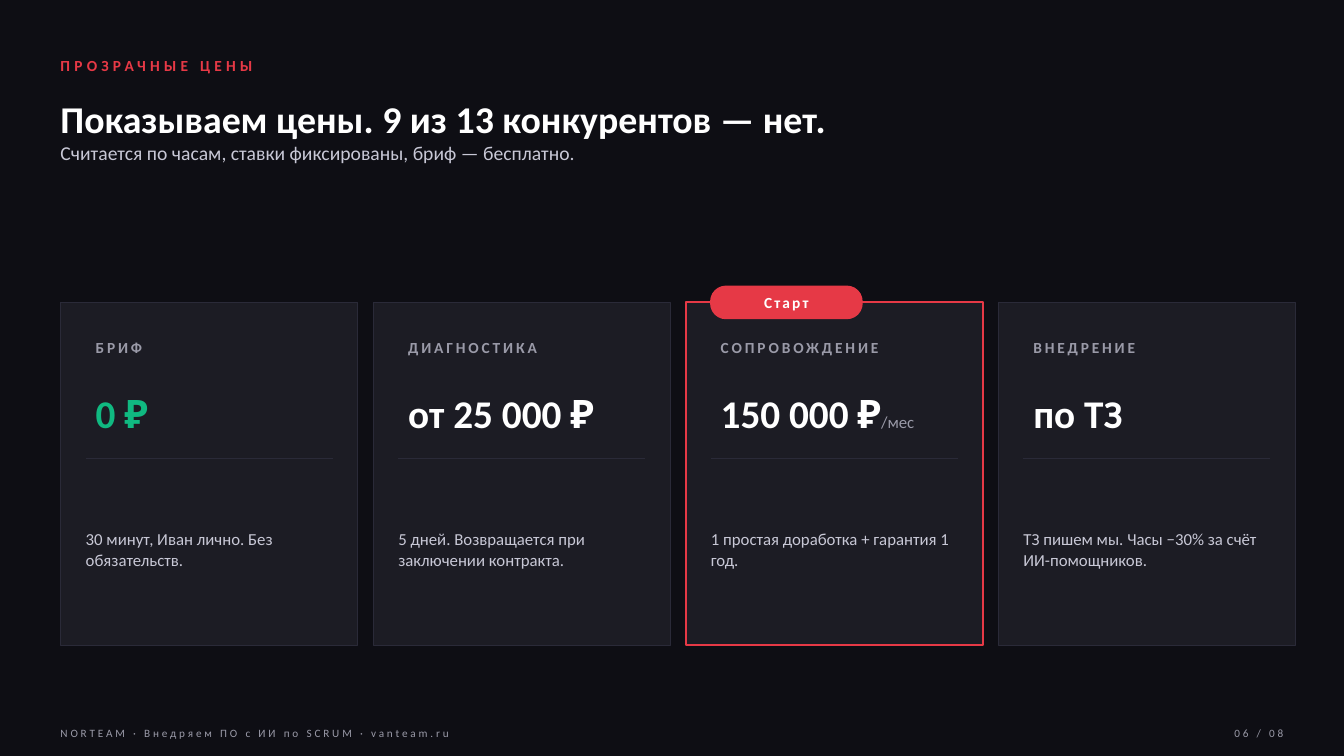
from lxml.etree import SubElement
from pptx import Presentation
from pptx.dml.color import RGBColor
from pptx.enum.shapes import MSO_CONNECTOR, MSO_SHAPE
from pptx.enum.text import MSO_ANCHOR, PP_ALIGN
from pptx.oxml.ns import qn
from pptx.util import Pt

RED, WHITE, GREEN = "E63946", "FFFFFF", "10B981"
GREY, PALE, EDGE, PANEL, NIGHT = "9A9AA8", "C8C8D6", "2A2A38", "1C1C24", "0E0E14"
LEFT, TOP, STEP, PAD = 60, 300, 310, 25
WIDE, HIGH = 295, 340
INNER = WIDE - 2 * PAD

CARDS = [
    ("БРИФ", [("0 ₽", 28, GREEN, True)],
     "30 минут, Иван лично. Без обязательств.", None),
    ("ДИАГНОСТИКА", [("от 25 000 ₽", 28, WHITE, True)],
     "5 дней. Возвращается при заключении контракта.", None),
    ("СОПРОВОЖДЕНИЕ", [("150 000 ₽", 28, WHITE, True), ("/мес", 12, GREY, False)],
     "1 простая доработка + гарантия 1 год.", "Старт"),
    ("ВНЕДРЕНИЕ", [("по ТЗ", 28, WHITE, True)],
     "ТЗ пишем мы. Часы −30% за счёт ИИ-помощников.", None),
]


def px(num):
    """Turn whole px, 100 to the inch, into EMU."""
    return num * 9144


def color(code):
    """Turn a hex string into a colour."""
    return RGBColor.from_string(code)


class Painter:
    """Draws styled elements on the current slide."""

    def __init__(self, slide, font="Calibri"):
        """Keep the slide and font, and paint the background."""
        self.slide, self.font = slide, font
        fill = slide.background.fill
        fill.solid()
        fill.fore_color.rgb = color(NIGHT)

    def text(self, box, parts, gap=0, align=PP_ALIGN.LEFT,
             anchor=MSO_ANCHOR.MIDDLE, inset=False, after=None):
        """Add one paragraph of (words, size, colour, bold) parts."""
        frame = self.slide.shapes.add_textbox(*map(px, box)).text_frame
        frame.word_wrap = True
        frame.vertical_anchor = anchor
        if not inset:
            frame.margin_left = frame.margin_right = 0
            frame.margin_top = frame.margin_bottom = 0
        para = frame.paragraphs[0]
        para.alignment = align
        if after:
            para.space_after = Pt(after)
        for words, size, tint, bold in parts:
            if words.startswith("\n"):
                para.add_line_break()
            run = para.add_run()
            run.text = words.lstrip("\n")
            font = run.font
            font.name, font.size, font.bold = self.font, Pt(size), bold
            font.color.rgb = color(tint)
            if gap:
                run._r.get_or_add_rPr().set("spc", str(int(gap * 100)))

    def shape(self, kind, box, fill, line, width):
        """Add a filled and outlined preset shape."""
        item = self.slide.shapes.add_shape(kind, *map(px, box))
        item.shadow.inherit = False
        item.fill.solid()
        item.fill.fore_color.rgb = color(fill)
        item.line.color.rgb = color(line)
        item.line.width = Pt(width)
        return item

    def rule(self, left, top, width):
        """Add a thin level line."""
        item = self.slide.shapes.add_connector(
            MSO_CONNECTOR.STRAIGHT, px(left), px(top), px(left + width), px(top))
        item.line.color.rgb = color(EDGE)
        item.line.width = Pt(0.75)
        SubElement(item._element.spPr, qn("a:effectLst"))

    def badge(self, left, label):
        """Add a pill that sits on the top edge of a card."""
        box = (left, TOP - 16, 150, 32)
        pill = self.shape(MSO_SHAPE.ROUNDED_RECTANGLE, box, RED, RED, 1)
        pill.adjustments[0] = 0.47
        self.text(box, [(label, 11, WHITE, True)], gap=1.5, align=PP_ALIGN.CENTER)

    def card(self, left, name, price, note, label):
        """Add one price card, marked in red if it has a label."""
        line, width = (RED, 1.5) if label else (EDGE, 0.75)
        self.shape(MSO_SHAPE.RECTANGLE, (left, TOP, WIDE, HIGH), PANEL, line, width)
        inner = left + PAD
        if label:
            self.badge(inner, label)
        self.text((inner, TOP + 30, INNER, 30), [(name, 11, GREY, True)],
                  gap=2, inset=True)
        self.text((inner, TOP + 75, INNER, 70), price, inset=True)
        self.rule(inner, TOP + 155, INNER)
        self.text((inner, TOP + 170, INNER, 150), [(note, 12, PALE, False)])


def main():
    """Build the price slide."""
    deck = Presentation()
    deck.slide_width, deck.slide_height = px(1333), px(750)
    pen = Painter(deck.slides.add_slide(deck.slide_layouts[6]))
    pen.text((LEFT, 50, 1200, 30), [("ПРОЗРАЧНЫЕ ЦЕНЫ", 11, RED, True)], gap=3)
    pen.text((LEFT, 95, 1200, 140), [
        ("Показываем цены. 9 из 13 конкурентов — нет.", 27, WHITE, True),
        ("\nСчитается по часам, ставки фиксированы, бриф — бесплатно.", 14, PALE, False),
    ], anchor=MSO_ANCHOR.TOP, after=4)
    for spot, card in enumerate(CARDS):
        pen.card(LEFT + spot * STEP, *card)
    pen.text((LEFT, 715, 900, 25),
             [("NORTEAM · Внедряем ПО с ИИ по SCRUM · vanteam.ru", 8, GREY, False)], gap=2)
    pen.text((1113, 715, 160, 25), [("06 / 08", 8, GREY, False)],
             gap=2, align=PP_ALIGN.RIGHT)
    deck.save("out.pptx")


if __name__ == "__main__":
    main()
